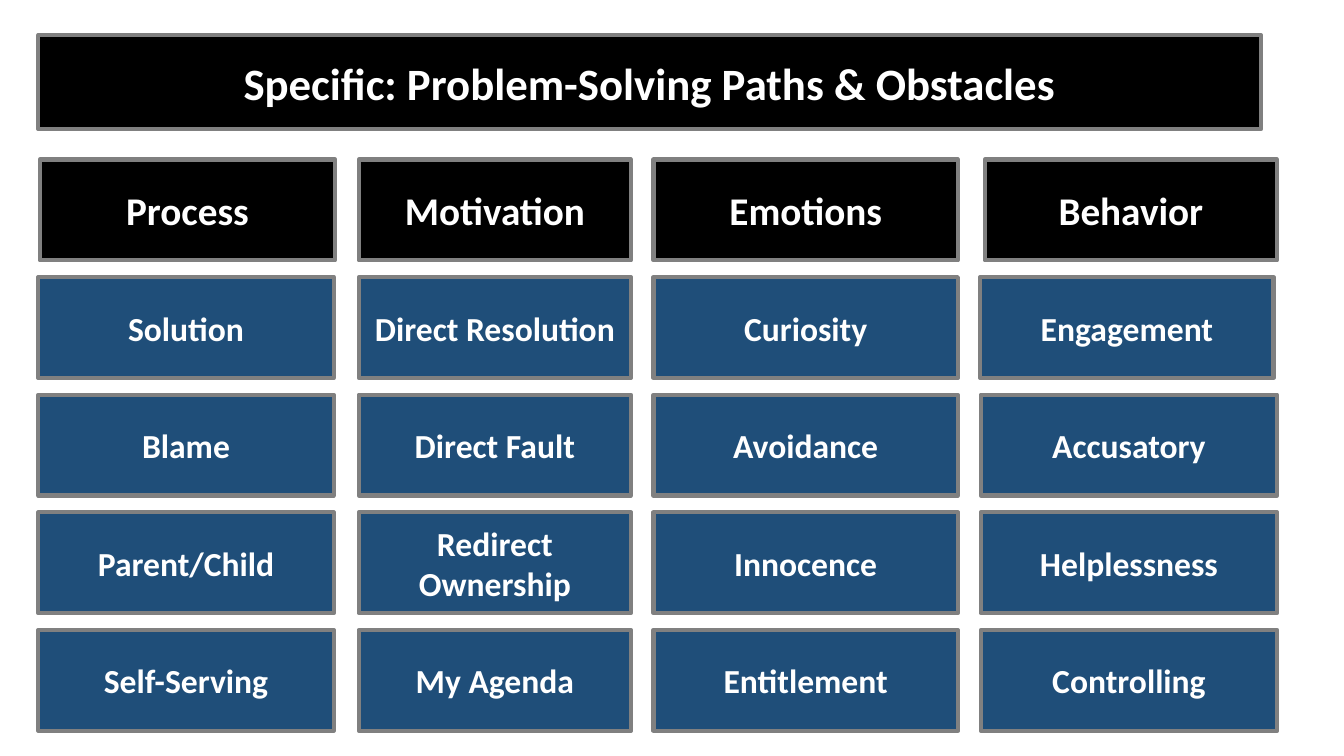
from dataclasses import dataclass

from pptx import Presentation
from pptx.dml.color import RGBColor
from pptx.enum.shapes import MSO_SHAPE
from pptx.enum.text import MSO_ANCHOR, PP_ALIGN
from pptx.util import Pt

RECTANGLE = MSO_SHAPE.RECTANGLE
MIDDLE = MSO_ANCHOR.MIDDLE
CENTER = PP_ALIGN.CENTER


@dataclass(frozen=True)
class Theme:
    font: str = "Calibri"
    header_fill: RGBColor = RGBColor(0x00, 0x00, 0x00)
    cell_fill: RGBColor = RGBColor(0x1F, 0x4E, 0x79)
    border: RGBColor = RGBColor(0x80, 0x80, 0x80)
    text: RGBColor = RGBColor(0xFF, 0xFF, 0xFF)
    border_width: float = 3
    title_size: int = 32
    header_size: int = 28
    cell_size: int = 24


class SlideBuilder:
    def __init__(self, slide, theme):
        self.slide = slide
        self.theme = theme

    def box(self, text, left, top, width, height, fill, size):
        shape = self.slide.shapes.add_shape(
            RECTANGLE, Pt(left), Pt(top), Pt(width), Pt(height)
        )
        shape.shadow.inherit = False
        shape.fill.solid()
        shape.fill.fore_color.rgb = fill
        shape.line.color.rgb = self.theme.border
        shape.line.width = Pt(self.theme.border_width)
        frame = shape.text_frame
        frame.word_wrap = True
        frame.vertical_anchor = MIDDLE
        paragraph = frame.paragraphs[0]
        paragraph.alignment = CENTER
        run = paragraph.add_run()
        run.text = text
        run.font.name = self.theme.font
        run.font.size = Pt(size)
        run.font.bold = True
        run.font.color.rgb = self.theme.text

    def title(self, text, left, top, width, height):
        self.box(text, left, top, width, height,
                 self.theme.header_fill, self.theme.title_size)

    def header(self, text, left, top, width, height):
        self.box(text, left, top, width, height,
                 self.theme.header_fill, self.theme.header_size)

    def cell(self, text, left, top, width, height):
        self.box(text, left, top, width, height,
                 self.theme.cell_fill, self.theme.cell_size)


GRID_TOP = 114
ROW_PITCH = 84
BOX_HEIGHT = 72

COLUMNS = [
    (27.4, 211, ["Process", "Solution", "Blame", "Parent/Child", "Self-Serving"]),
    (256.3, 194.4, ["Motivation", "Direct Resolution", "Direct Fault",
                    "Redirect Ownership", "My Agenda"]),
    (466.8, 217.4, ["Emotions", "Curiosity", "Avoidance", "Innocence", "Entitlement"]),
    (700.6, 211.7, ["Behavior", "Engagement", "Accusatory", "Helplessness",
                    "Controlling"]),
]
ADJUSTED_SPANS = {
    "Process": (28.4, 211),
    "Behavior": (703.4, 208.8),
    "Engagement": (700.2, 209.5),
}


def main():
    presentation = Presentation()
    presentation.slide_width = Pt(960)
    presentation.slide_height = Pt(540)
    slide = presentation.slides.add_slide(presentation.slide_layouts[6])
    builder = SlideBuilder(slide, Theme())

    builder.title("Specific: Problem-Solving Paths & Obstacles", 27.4, 25.2, 873.4, 67)
    for column_left, column_width, labels in COLUMNS:
        for row, label in enumerate(labels):
            left, width = ADJUSTED_SPANS.get(label, (column_left, column_width))
            draw = builder.cell if row else builder.header
            draw(label, left, GRID_TOP + row * ROW_PITCH, width, BOX_HEIGHT)

    presentation.save("out.pptx")


if __name__ == "__main__":
    main()
